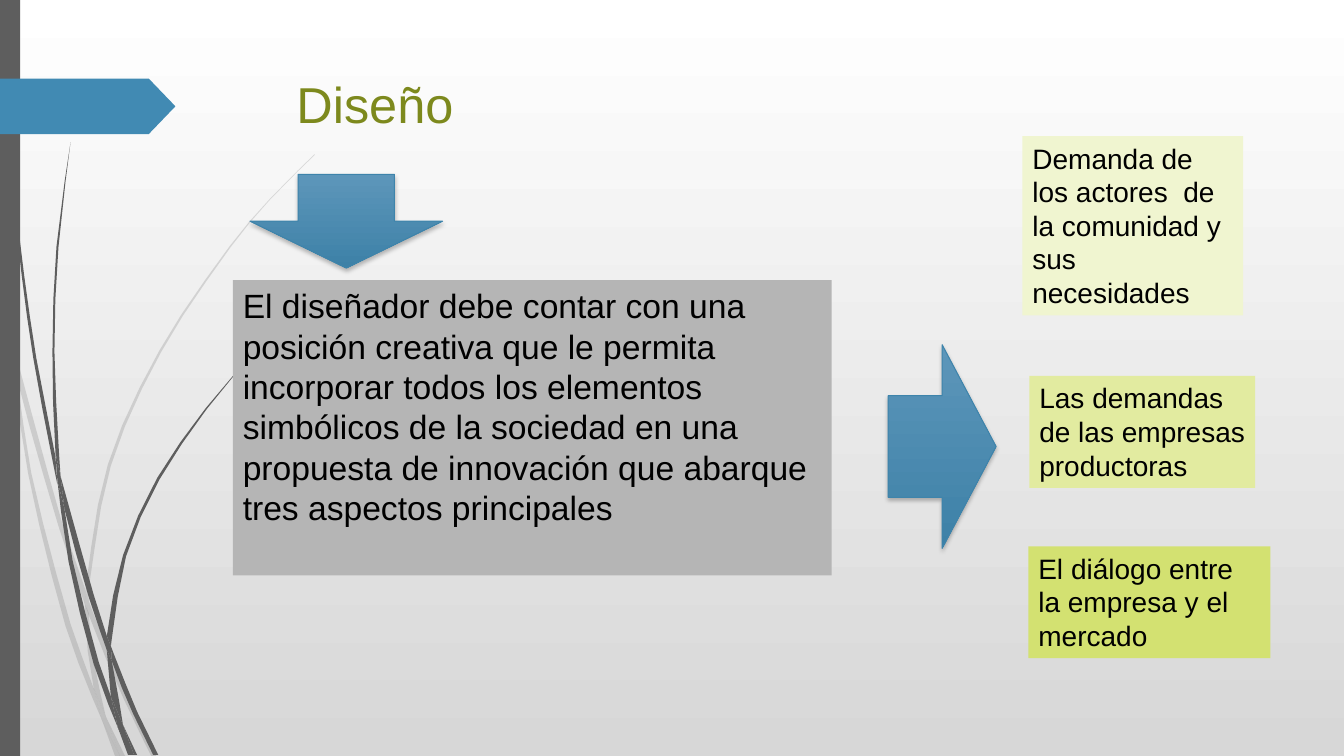
"""Build the slide on design and its three demands."""
from math import dist

from lxml import etree
from pptx import Presentation
from pptx.dml.color import RGBColor
from pptx.enum.shapes import MSO_SHAPE as Shape
from pptx.enum.text import MSO_ANCHOR as Anchor, PP_ALIGN as Align
from pptx.oxml.ns import qn
from pptx.util import Inches, Pt

TITLE = "Diseño"
GRAY, BLUE, BLACK = "5E5E5E", "418AB3", "000000"
BOXES = [
    ("El diseñador debe contar con una posición creativa que le permita "
     "incorporar todos los elementos simbólicos de la sociedad en una "
     "propuesta de innovación que abarque tres aspectos principales",
     (2.31, 2.78, 5.94, 2.93), "B5B5B5", 24),
    ("Demanda de los actores  de la comunidad y sus necesidades",
     (10.14, 1.35, 2.19, 1.78), "F0F5D0", 20),
    ("Las demandas de las empresas productoras",
     (10.21, 3.73, 2.24, 1.11), "E2EBA0", 20),
    ("El diálogo entre la empresa y el mercado",
     (10.2, 5.42, 2.4, 1.11), "D3E171", 20),
]
ARROWS = [
    (Shape.DOWN_ARROW, (2.48, 1.73, 1.91, 0.93)),
    (Shape.RIGHT_ARROW, (8.81, 3.42, 1.07, 2.02)),
]
PALE = [
    [(0.11, 3.5), (0, 2.82), (0, 2.99)],
    [(0.58, 5.22), (0.84, 5.99), (0.85, 5.86), (0.62, 5.2), (0.14, 3.45),
     (0.17, 3.76)],
    [(0.92, 6.07), (0.88, 5.96), (0.88, 6.1), (1.23, 6.94), (1.5, 7.5),
     (1.55, 7.5), (1.27, 6.92)],
    [(1.19, 7.5), (1.24, 7.5), (1.05, 7.11)],
    [(0.93, 6.83), (0.7, 6.19), (0.31, 4.69), (0.17, 3.76), (0.11, 3.5),
     (0.28, 4.7), (0.65, 6.21), (0.92, 6.93), (1.01, 7.14)],
    [(0.84, 5.99), (0.87, 6.46), (0.93, 6.83), (1.05, 7.11),
     (0.91, 6.46), (0.88, 6.08)],
    [(0.88, 5.84), (1.1, 4.62), (1.6, 3.49), (2.29, 2.45), (2.68, 1.98),
     (3.12, 1.54), (3.12, 1.53), (2.68, 1.97), (2.28, 2.44), (1.58, 3.48),
     (1.07, 4.61), (0.85, 5.84), (0.88, 5.96)],
    [(1.01, 7.14), (1.14, 7.5), (1.19, 7.5)],
    [(0.88, 6.1), (0.88, 5.96), (0.85, 5.86), (0.84, 5.99)],
    [(0.93, 6.83), (1.01, 7.14), (1.19, 7.5), (1.05, 7.11)],
]
DARK = [
    [(0.07, 1.1), (0.17, 2.33), (0.33, 3.55), (0.57, 4.81), (0.55, 4.53),
     (0.36, 3.55), (0.19, 2.32), (0.08, 1.09), (0.04, 0), (0.03, 0)],
    [(0.88, 5.92), (1.06, 6.45), (1.06, 6.31), (0.93, 5.9), (0.6, 4.72),
     (0.64, 5.05)],
    [(1.13, 6.49), (1.1, 6.41), (1.11, 6.56), (1.32, 7.08), (1.52, 7.49),
     (1.57, 7.49), (1.36, 7.06)],
    [(1.1, 6.91), (0.98, 6.57), (0.72, 5.56), (0.64, 5.05), (0.57, 4.77),
     (0.68, 5.57), (0.93, 6.59), (1.17, 7.22)],
    [(0.6, 4.72), (0.54, 3.49), (0.58, 2.45), (0.7, 1.41), (0.56, 2.45),
     (0.52, 3.49), (0.55, 4.49)],
    [(1.33, 7.49), (1.36, 7.49), (1.22, 7.19)],
    [(0.57, 4.77), (0.64, 5.05), (0.6, 4.72), (0.55, 4.49)],
    [(1.11, 6.33), (1.25, 5.52), (1.58, 4.76), (2.05, 4.06), (2.31, 3.74),
     (2.61, 3.44), (2.6, 3.44), (2.31, 3.73), (2.04, 4.05), (1.56, 4.74),
     (1.22, 5.51), (1.06, 6.31), (1.1, 6.41)],
    [(1.17, 7.22), (1.27, 7.49), (1.31, 7.49)],
    [(1.06, 6.45), (1.1, 6.91), (1.22, 7.19), (1.11, 6.56)],
    [(1.06, 6.45), (1.11, 6.56), (1.1, 6.41), (1.06, 6.31)],
    [(1.1, 6.91), (1.17, 7.22), (1.3, 7.49), (1.33, 7.49), (1.22, 7.19)],
]


def color(text):
    return RGBColor.from_string(text)


def blend(fill, top, base):
    fill.gradient()
    fill.gradient_angle = 270
    for stop, tone in zip(fill.gradient_stops, (top, base)):
        stop.color.rgb = color(tone)


def write(shape, text, size, tone):
    frame = shape.text_frame
    frame.word_wrap = True
    frame.vertical_anchor = Anchor.TOP
    frame.text = text
    para = frame.paragraphs[0]
    para.alignment = Align.LEFT
    font = para.runs[0].font
    font.name, font.size = "Arial", Pt(size)
    font.color.rgb = color(tone)


def paint(shape, tone):
    shape.shadow.inherit = False
    shape.fill.solid()
    shape.fill.fore_color.rgb = color(tone)
    shape.line.fill.background()


def place(shapes, kind, area):
    return shapes.add_shape(kind, *map(Inches, area))


def slope(prev, here, after):
    """Give the unit tangent at a point, or zero at a corner."""
    back, front = dist(prev, here), dist(here, after)
    turn = sum((h - p) * (a - h) for p, h, a in zip(prev, here, after))
    if turn < 0.8 * back * front:
        return 0, 0
    span = dist(prev, after)
    return tuple((a - p) / span for p, a in zip(prev, after))


def smooth(points):
    """Run a soft closed curve through the points."""
    count = len(points)
    slopes = [slope(points[i - 1], points[i], points[(i + 1) % count])
              for i in range(count)]
    curve = []
    for i, start in enumerate(points):
        j = (i + 1) % count
        end = points[j]
        reach = dist(start, end) / 3
        steps = 1 + int(reach / 0.18)
        for step in range(steps):
            t = step / steps
            u = 1 - t
            curve.append(tuple(
                Inches(u**3 * a + 3 * u * u * t * (a + m * reach)
                       + 3 * u * t * t * (b - n * reach) + t**3 * b)
                for a, b, m, n in zip(start, end, slopes[i], slopes[j])))
    return curve


def add_blade(shapes, points, alpha=100):
    curve = smooth(points)
    pen = shapes.build_freeform(*curve[0])
    pen.add_line_segments(curve[1:])
    blade = pen.convert_to_shape()
    paint(blade, GRAY)
    if alpha < 100:
        tone = blade.fill._xPr.find(".//" + qn("a:srgbClr"))
        etree.SubElement(tone, qn("a:alpha"), val=str(alpha * 1000))


def add_arrow(shapes, kind, area):
    arrow = place(shapes, kind, area)
    blend(arrow.fill, "5D96BA", "3D81A7")
    arrow.line.color.rgb = color("3E84AB")
    arrow.line.width = Pt(0.75)
    arrow.shadow.inherit = False
    effects = arrow._element.spPr.find(qn("a:effectLst"))
    shade = etree.SubElement(effects, qn("a:outerShdw"), blurRad=str(Pt(3)),
                             dist=str(Pt(2)), dir="5400000", rotWithShape="0")
    tone = etree.SubElement(shade, qn("a:srgbClr"), val=BLACK)
    etree.SubElement(tone, qn("a:alpha"), val="25000")


def main():
    deck = Presentation()
    deck.slide_width, deck.slide_height = Inches(13.33), Inches(7.5)
    slide = deck.slides.add_slide(deck.slide_layouts[5])
    shapes = slide.shapes
    blend(slide.background.fill, "FFFFFF", "D7D7D7")

    title = shapes.title
    title.left, title.top = Inches(2.84), Inches(0.68)
    title.width, title.height = Inches(9.75), Inches(1.4)
    write(title, TITLE, size=36, tone="7D891D")

    for points in PALE:
        add_blade(shapes, points, alpha=20)
    for points in DARK:
        add_blade(shapes, points)
    paint(place(shapes, Shape.RECTANGLE, (0, 0, 0.2, 7.5)), GRAY)
    tag = place(shapes, Shape.PENTAGON, (0, 0.78, 1.74, 0.55))
    tag.adjustments[0] = 0.48
    paint(tag, BLUE)

    for kind, area in ARROWS:
        add_arrow(shapes, kind, area)
    for text, area, tone, size in BOXES:
        box = place(shapes, Shape.RECTANGLE, area)
        paint(box, tone)
        write(box, text, size=size, tone=BLACK)
    deck.save("out.pptx")


if __name__ == "__main__":
    main()
